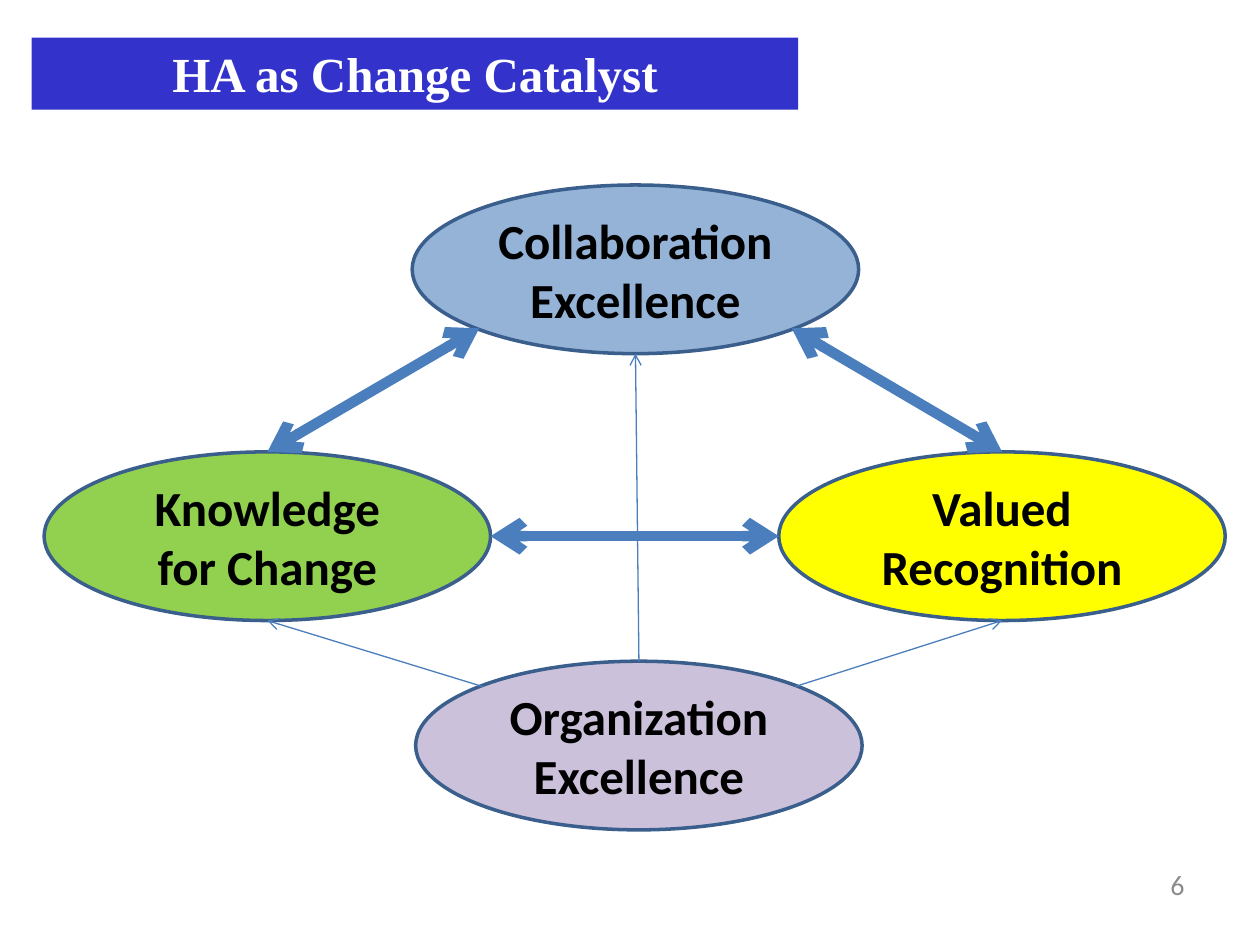
from lxml.etree import SubElement as Sub
from pptx import Presentation
from pptx.dml.color import RGBColor
from pptx.enum.shapes import MSO_CONNECTOR as Link, MSO_SHAPE as Kind
from pptx.enum.text import MSO_ANCHOR as Anchor, PP_ALIGN as Align
from pptx.oxml.ns import qn
from pptx.util import Cm, Pt

DIAG = 0.35  # offset of an ellipse's diagonal points from its centre
SITES = {
    "top": (0.5, 0), "bottom": (0.5, 1), "left": (0, 0.5), "right": (1, 0.5),
    "nw": (0.5 - DIAG, 0.5 - DIAG), "ne": (0.5 + DIAG, 0.5 - DIAG),
    "sw": (0.5 - DIAG, 0.5 + DIAG), "se": (0.5 + DIAG, 0.5 + DIAG),
}
OVAL_W, OVAL_H = 9, 3.4

# name: left and top within the diagram, fill, paragraphs
OVALS = {
    "collab": (7.42, 0, "95B3D7", ["Collaboration Excellence"]),
    "know": (0, 5.38, "92D050", ["Knowledge for Change"]),
    "value": (14.81, 5.38, "FFFF00", ["Valued", "Recognition"]),
    "org": (7.49, 9.6, "CCC1DA", ["Organization Excellence"]),
}

# start, end, width in points, arrowheads
BOTH, END = ("headEnd", "tailEnd"), ("tailEnd",)
LINKS = [
    (("collab", "se"), ("value", "top"), 6, BOTH),
    (("know", "right"), ("value", "left"), 6, BOTH),
    (("know", "top"), ("collab", "sw"), 6, BOTH),
    (("org", "ne"), ("value", "bottom"), 0.75, END),
    (("org", "nw"), ("know", "bottom"), 0.75, END),
    (("org", "top"), ("collab", "bottom"), 0.75, END),
]


def color(code):
    return RGBColor.from_string(code)


def write(shape, lines, font, size, ink, bold=True, align=Align.CENTER,
          anchor=Anchor.MIDDLE):
    frame = shape.text_frame
    frame.word_wrap = True
    frame.vertical_anchor = anchor
    frame.text = "\n".join(lines)
    for para in frame.paragraphs:
        para.alignment = align
        para.font.name = font
        para.font.size = Pt(size)
        para.font.bold = bold
        para.font.color.rgb = color(ink)


def add_form(slide, kind, box, fill):
    shape = slide.shapes.add_shape(kind, *map(Cm, box))
    shape.shadow.inherit = False
    shape.fill.solid()
    shape.fill.fore_color.rgb = color(fill)
    return shape


def add_title(slide, box):
    bar = add_form(slide, Kind.RECTANGLE, box, "3333CC")
    bar.line.fill.background()
    write(bar, ["HA as Change Catalyst"], "Times New Roman", 28, "FFFFFF",
          anchor=Anchor.TOP)


def add_arrow(slide, start, end, width, heads):
    line = slide.shapes.add_connector(Link.STRAIGHT, *map(Cm, start + end))
    line.line.color.rgb = color("4B7EBC")
    line.line.width = Pt(width)
    props = line.line._get_or_add_ln()
    for head in heads:
        Sub(props, qn("a:" + head), type="arrow")
    Sub(props.getparent(), qn("a:effectLst"))


def add_web(slide, left, top):
    # Ovals
    for x, y, fill, lines in OVALS.values():
        oval = add_form(slide, Kind.OVAL, (left + x, top + y, OVAL_W, OVAL_H), fill)
        oval.line.color.rgb = color("3A5F8C")
        oval.line.width = Pt(2)
        write(oval, lines, "Calibri", 28, "000000")

    # Arrows between points on the ovals
    def spot(name, site):
        x, y = OVALS[name][:2]
        across, down = SITES[site]
        return left + x + across * OVAL_W, top + y + down * OVAL_H

    for start, end, width, heads in LINKS:
        add_arrow(slide, spot(*start), spot(*end), width, heads)


def add_number(slide, box):
    note = slide.shapes.add_textbox(*map(Cm, box))
    write(note, ["6"], "Calibri", 16, "8C8C8C", bold=False, align=Align.RIGHT)


def main():
    deck = Presentation()
    deck.slide_width, deck.slide_height = Cm(25.4), Cm(19.05)
    slide = deck.slides.add_slide(deck.slide_layouts[6])
    add_number(slide, (18.2, 17.32, 5.93, 1.01))
    add_title(slide, (0.64, 0.76, 15.45, 1.45))
    add_web(slide, 0.89, 3.73)
    deck.save("out.pptx")


if __name__ == "__main__":
    main()
